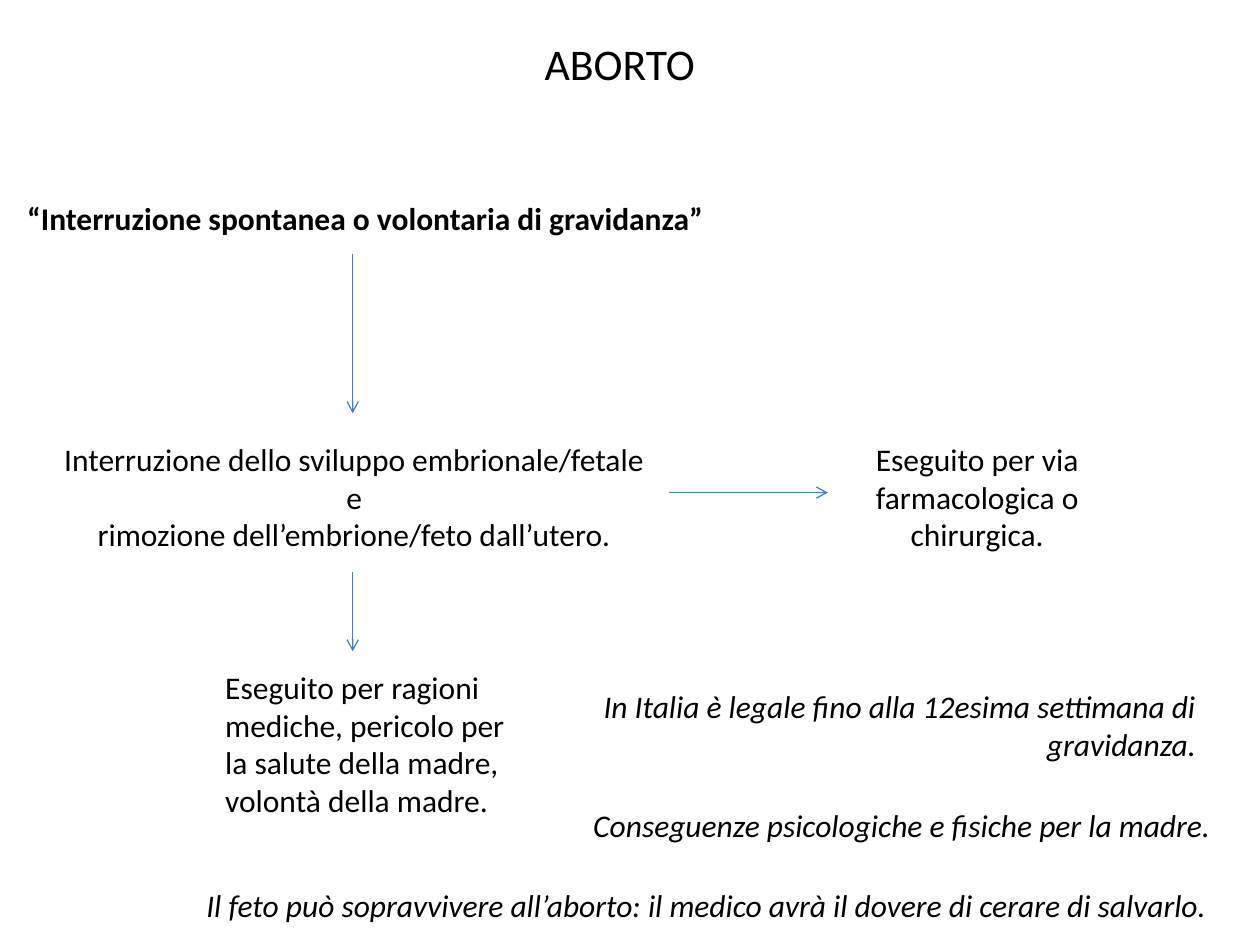
"""Build the slide that sums up abortion as a small flow of texts and arrows."""
from dataclasses import dataclass

from lxml.etree import SubElement
from pptx import Presentation
from pptx.dml.color import RGBColor
from pptx.enum.shapes import MSO_CONNECTOR
from pptx.enum.text import MSO_AUTO_SIZE, PP_ALIGN
from pptx.oxml.ns import qn
from pptx.util import Cm, Pt


@dataclass(frozen=True)
class Theme:
    font: str = "Calibri"
    text: RGBColor = RGBColor(0x00, 0x00, 0x00)
    arrow: RGBColor = RGBColor(0x4B, 0x7E, 0xBC)
    title_size: Pt = Pt(25)
    body_size: Pt = Pt(18)
    arrow_width: Pt = Pt(0.75)


THEME = Theme()
LEFT, CENTER, RIGHT = PP_ALIGN.LEFT, PP_ALIGN.CENTER, PP_ALIGN.RIGHT


def add_text(s, text, box, align=LEFT, wrap=True, size=THEME.body_size,
             bold=False, italic=False):
    """Add a text box, one paragraph for each line of text."""
    tf = s.shapes.add_textbox(*map(Cm, box)).text_frame
    tf.word_wrap = wrap
    tf.auto_size = MSO_AUTO_SIZE.SHAPE_TO_FIT_TEXT
    tf.text = text
    for p in tf.paragraphs:
        p.alignment = align
        for r in p.runs:
            r.font.name = THEME.font
            r.font.size = size
            r.font.bold = bold
            r.font.italic = italic
            r.font.color.rgb = THEME.text


def add_arrow(s, x1, y1, x2, y2):
    """Add a straight line with an open arrowhead at its end."""
    sp = s.shapes.add_connector(MSO_CONNECTOR.STRAIGHT, *map(Cm, (x1, y1, x2, y2)))
    sp.line.color.rgb = THEME.arrow
    sp.line.width = THEME.arrow_width
    SubElement(sp.line._get_or_add_ln(), qn("a:tailEnd"), type="arrow")
    SubElement(sp._element.spPr, qn("a:effectLst"))


def main():
    prs = Presentation()
    prs.slide_width, prs.slide_height = Cm(25.4), Cm(19.05)
    s = prs.slides.add_slide(prs.slide_layouts[6])
    flow_x, row_y, row_h, line_h = 7.11, 8.74, 2.57, 1.02

    add_text(s, "ABORTO", (9.7, 0.61, 5.59, 1.32), CENTER, size=THEME.title_size)
    add_text(s, "“Interruzione spontanea o volontaria di gravidanza”",
             (0.3, 3.89, 14.25, line_h), wrap=False, bold=True)
    add_text(s, "Interruzione dello sviluppo embrionale/fetale\ne\n"
                "rimozione dell’embrione/feto dall’utero.",
             (0.97, row_y, 12.34, row_h), CENTER, wrap=False)
    add_text(s, "Eseguito per via farmacologica o chirurgica.",
             (17.3, row_y, 4.8, row_h), CENTER)
    add_text(s, "Eseguito per ragioni mediche, pericolo per la salute della madre, "
                "volontà della madre.", (4.29, 13.34, 6.5, 3.33))

    add_text(s, "In Italia è legale fino alla 12esima settimana di gravidanza.",
             (11.91, 13.72, 12.45, 1.8), RIGHT, italic=True)
    add_text(s, "Conseguenze psicologiche e fisiche per la madre.",
             (11.71, 16.13, 13.11, line_h), wrap=False, italic=True)
    add_text(s, "Il feto può sopravvivere all’aborto: il medico avrà il dovere "
                "di cerare di salvarlo.",
             (3.91, 17.73, 20.73, line_h), wrap=False, italic=True)

    add_arrow(s, flow_x, 5.13, flow_x, 8.33)
    add_arrow(s, flow_x, 11.53, flow_x, 13.13)
    add_arrow(s, 13.49, 9.93, 16.69, 9.93)
    prs.save("out.pptx")


if __name__ == "__main__":
    main()
